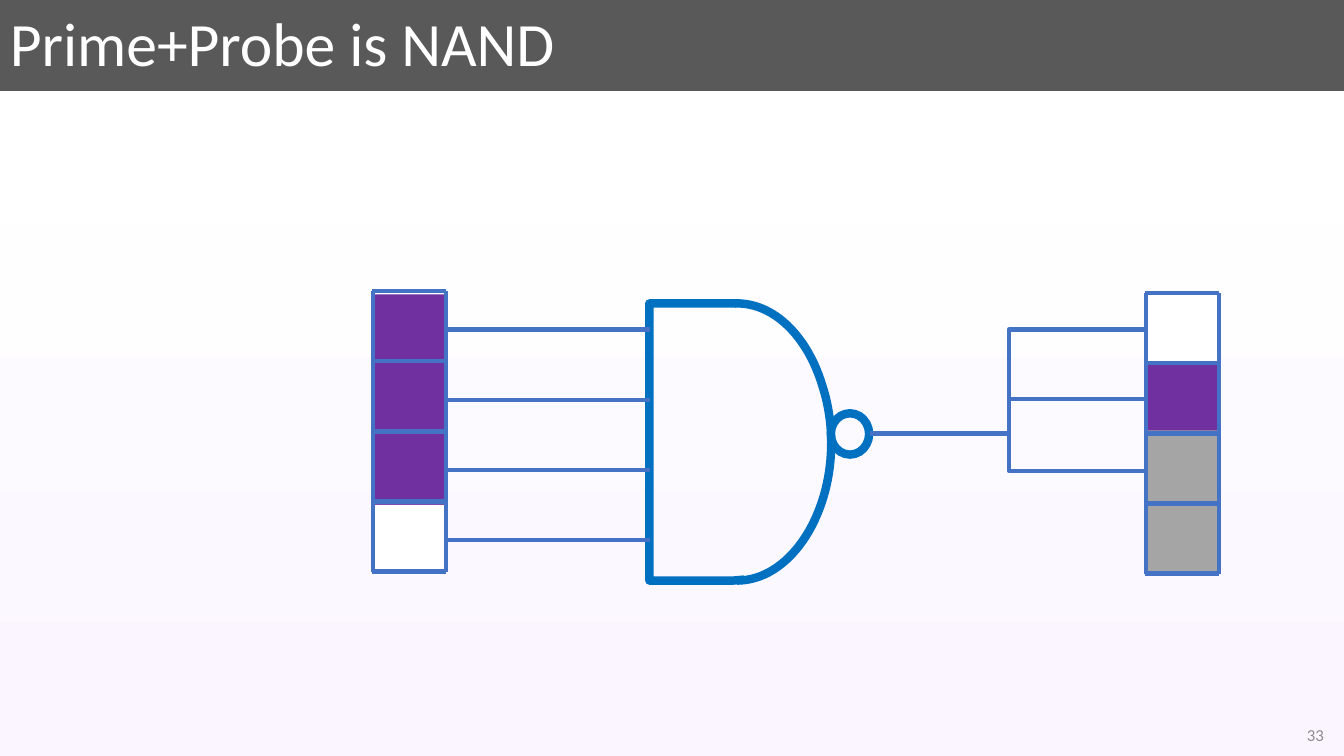
from lxml.etree import SubElement
from pptx import Presentation
from pptx.dml.color import RGBColor
from pptx.enum.shapes import MSO_CONNECTOR as Link, MSO_SHAPE as Shape
from pptx.enum.text import MSO_ANCHOR as Anchor, PP_ALIGN as Align
from pptx.oxml.ns import qn
from pptx.util import Inches, Pt

WIRE = "4472C4"
GATE = "0070C0"
PURPLE = "7030A0"
GREY = "A5A5A5"
WHITE = "FFFFFF"
STEP = 0.695


def color(code):
    """Turn a hex string into a colour."""
    return RGBColor.from_string(code)


def backdrop(slide, stops):
    """Fill the background with a downward gradient."""
    fill = slide.background.fill
    fill.gradient()
    fill.gradient_angle = 270
    grad = slide.element.find(".//" + qn("a:gsLst"))
    for stop in list(grad):
        grad.remove(stop)
    for pos, code in stops:
        stop = SubElement(grad, qn("a:gs"), pos=str(pos * 1000))
        SubElement(stop, qn("a:srgbClr"), val=code)


def label(slide, text, box, size, code, align=Align.LEFT):
    """Add one line of text, centred in height."""
    frame = slide.shapes.add_textbox(*map(Inches, box)).text_frame
    frame.word_wrap = True
    frame.vertical_anchor = Anchor.MIDDLE
    frame.text = text
    para = frame.paragraphs[0]
    para.alignment = align
    para.line_spacing = 0.9
    font = para.runs[0].font
    font.name = "Calibri"
    font.size = Pt(size)
    font.color.rgb = color(code)


def block(slide, box, code):
    """Add a filled rectangle without a border."""
    shape = slide.shapes.add_shape(Shape.RECTANGLE, *map(Inches, box))
    shape.shadow.inherit = False
    shape.fill.solid()
    shape.fill.fore_color.rgb = color(code)
    shape.line.fill.background()


def wire(slide, start, end, kind=Link.STRAIGHT):
    """Add a straight or bent wire."""
    link = slide.shapes.add_connector(kind, *map(Inches, start + end))
    link.line.color.rgb = color(WIRE)
    link.line.width = Pt(3)
    SubElement(link.element.spPr, qn("a:effectLst"))


def grid(slide, left, right, top):
    """Rule a column of four cells."""
    low = top + 4 * STEP
    for row in range(5):
        y = top + row * STEP
        wire(slide, (left, y), (right, y))
    for x in (left + 0.01, right):
        wire(slide, (x, top), (x, low))


def ink(shape):
    """Give a gate part its thick outline and no fill."""
    shape.shadow.inherit = False
    shape.fill.background()
    shape.line.color.rgb = color(GATE)
    shape.line.width = Pt(6)


def trace(slide, dots):
    """Draw an open outline through the points."""
    dots = [(Inches(x), Inches(y)) for x, y in dots]
    pen = slide.shapes.build_freeform(*dots[0], scale=1.0)
    pen.add_line_segments(dots[1:], close=False)
    ink(pen.convert_to_shape())


def curve(a, b, c, d, count=24):
    """List points along a cubic curve."""
    dots = []
    for i in range(count + 1):
        t = i / count
        u = 1 - t
        dots.append(tuple(
            u**3 * p + 3 * u * u * t * q + 3 * u * t * t * r + t**3 * s
            for p, q, r, s in zip(a, b, c, d)))
    return dots


def gate(slide):
    """Draw the NAND gate."""
    trace(slide, [(7.3, 3.01), (6.44, 3.01), (6.44, 5.76), (7.27, 5.76), (7.38, 5.75)])
    upper, lower = (8.16, 3.84), (8.17, 4.92)
    trace(slide, curve((7.29, 3.01), (7.67, 3), (8.01, 3.33), upper)
          + curve(upper, (8.27, 4.18), (8.27, 4.58), lower)[1:]
          + curve(lower, (8.02, 5.43), (7.68, 5.76), (7.31, 5.76))[1:])
    ink(slide.shapes.add_shape(Shape.OVAL, *map(Inches, (8.24, 4.1, 0.38, 0.41))))


def main():
    """Build the slide."""
    deck = Presentation()
    deck.slide_width, deck.slide_height = Inches(13.33), Inches(7.5)
    slide = deck.slides.add_slide(deck.slide_layouts[6])
    backdrop(slide, [(0, "595959"), (12, "595959"), (12, WHITE), (100, "FAF5FF")])
    label(slide, "Prime+Probe is NAND", (0, 0, 13.23, 0.92), 44, WHITE)
    label(slide, "33", (10.23, 7.1, 3, 0.4), 12, "8C8C8C", Align.RIGHT)

    block(slide, (11.37, 2.92, 0.71, 2.75), GREY)
    block(slide, (3.71, 2.92, 0.71, 2.75), PURPLE)
    block(slide, (11.37, 2.91, 0.73, 0.67), WHITE)
    block(slide, (11.38, 3.6, 0.73, 0.67), PURPLE)
    block(slide, (3.71, 5.01, 0.73, 0.67), WHITE)

    gate(slide)
    for row in range(4):
        y = 3.27 + row * STEP
        wire(slide, (4.42, y), (6.45, y))
    for y in (3.27, 3.96, 4.67):
        wire(slide, (8.63, 4.3), (11.38, y), Link.ELBOW)
    grid(slide, 11.36, 12.09, 2.91)
    grid(slide, 3.69, 4.42, 2.89)
    deck.save("out.pptx")


if __name__ == "__main__":
    main()
